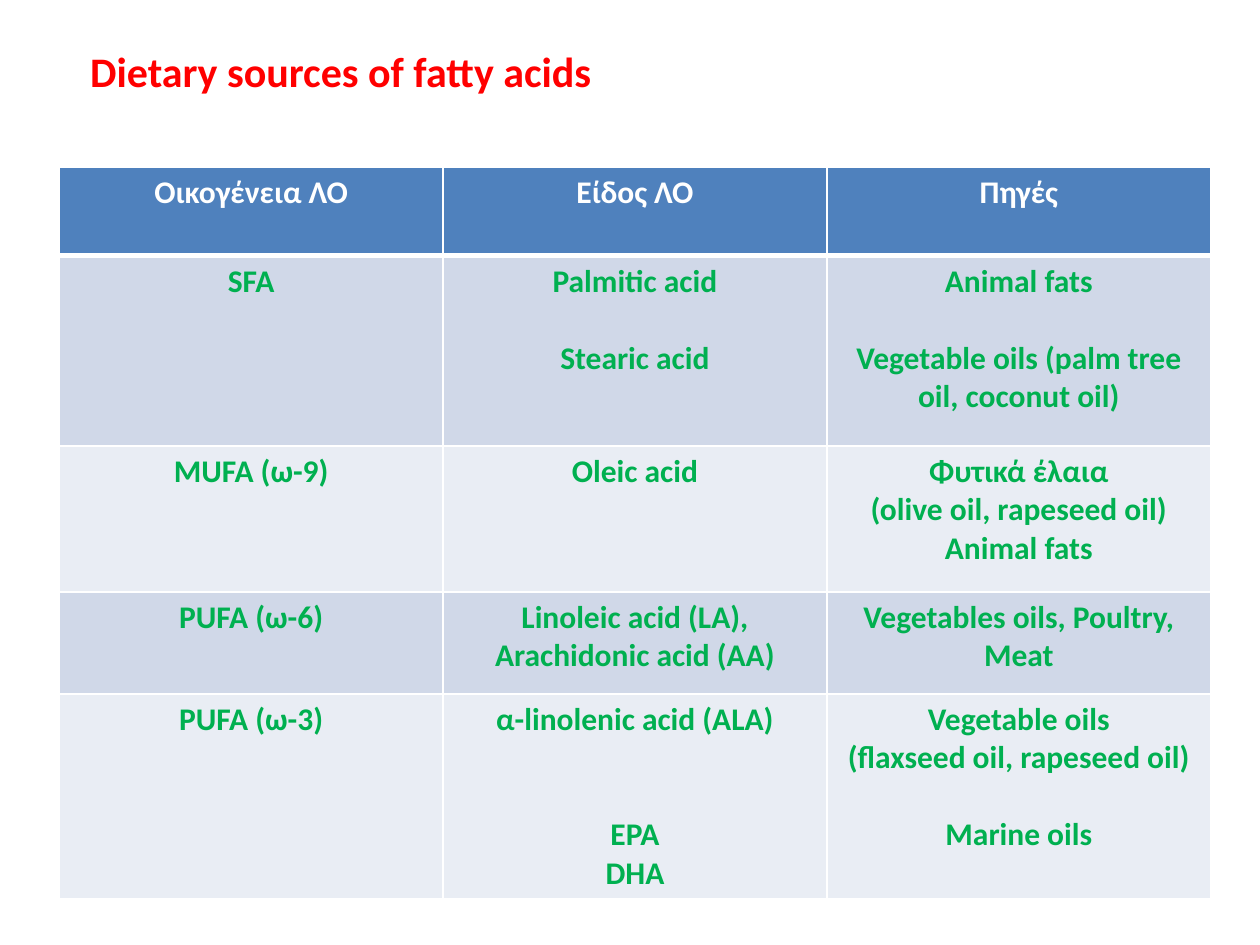
import pptx
import pptx.dml.color
import pptx.enum.text
import pptx.oxml
import pptx.oxml.ns
import pptx.util
from pptx.util import Inches

COLORS = {
    "title": "FF0000",
    "header": "4F81BD",
    "header_text": "FFFFFF",
    "band_dark": "D0D8E8",
    "band_light": "E9EDF4",
    "body_text": "00B050",
    "border": "FFFFFF",
}
LINE_HEIGHT = 22  # points taken by one 18 pt line

# Each cell is a list of lines; a number is a gap of that many lines
HEADER = ["Οικογένεια ΛΟ", "Είδος ΛΟ", "Πηγές"]
ROWS = [
    [["SFA"],
     ["Palmitic acid", 1, "Stearic acid"],
     ["Animal fats", 1, "Vegetable oils (palm tree oil, coconut oil)"]],
    [["MUFA (ω-9)"],
     ["Oleic acid"],
     ["Φυτικά έλαια", "(olive oil, rapeseed oil)", "Animal fats"]],
    [["PUFA (ω-6)"],
     ["Linoleic acid (LA), Arachidonic acid (AA)"],
     ["Vegetables oils, Poultry, Meat"]],
    [["PUFA (ω-3)"],
     ["α-linolenic acid (ALA)", 2, "ΕΡΑ", "DHA"],
     ["Vegetable oils", "(flaxseed oil, rapeseed oil)", 1, "Marine oils"]],
]
ROW_HEIGHTS = [0.7, 1.51, 1.16, 0.81, 1.6]


class SlideBuilder:
    font = "Calibri"

    def __init__(self, prs):
        self.s = prs.slides.add_slide(prs.slide_layouts[5])

    def color(self, name):
        return pptx.dml.color.RGBColor.from_string(COLORS[name])

    def format(self, p, size, color):
        p.alignment = pptx.enum.text.PP_ALIGN.CENTER
        p.font.name = self.font
        p.font.size = pptx.util.Pt(size)
        p.font.bold = True
        p.font.color.rgb = self.color(color)

    def title(self, text, left, top, width, height):
        sp = self.s.shapes.title
        sp.left, sp.top = Inches(left), Inches(top)
        sp.width, sp.height = Inches(width), Inches(height)
        tf = sp.text_frame
        tf.text = text
        tf.word_wrap = False
        tf.auto_size = pptx.enum.text.MSO_AUTO_SIZE.NONE
        tf.vertical_anchor = pptx.enum.text.MSO_ANCHOR.TOP
        self.format(tf.paragraphs[0], 24, "title")

    def borders(self, cell, **widths):
        tc_pr = cell._tc.get_or_add_tcPr()
        for side in "LRTB":
            width = pptx.util.Pt(widths.get(side, 1))
            tc_pr.append(pptx.oxml.parse_xml(
                f'<a:ln{side} {pptx.oxml.ns.nsdecls("a")} w="{width}"><a:solidFill>'
                f'<a:srgbClr val="{COLORS["border"]}"/></a:solidFill></a:ln{side}>'))

    def cell(self, cell, lines, fill, color, **widths):
        self.borders(cell, **widths)
        cell.fill.solid()
        cell.fill.fore_color.rgb = self.color(fill)
        p, gap = None, 0
        for line in lines:
            if isinstance(line, int):
                gap = line
                continue
            p = cell.text_frame.add_paragraph() if p else cell.text_frame.paragraphs[0]
            p.text = line
            self.format(p, 18, color)
            if gap:
                p.space_before = pptx.util.Pt(gap * LINE_HEIGHT)
                gap = 0

    def table(self, header, rows, heights, left, top, width):
        table = self.s.shapes.add_table(
            len(rows) + 1, len(header), Inches(left), Inches(top),
            Inches(width), Inches(sum(heights))).table
        for row, height in zip(table.rows, heights):
            row.height = Inches(height)
        for c, text in enumerate(header):
            self.cell(table.cell(0, c), [text], "header", "header_text", B=3)
        for r, row in enumerate(rows, 1):
            fill = "band_dark" if r % 2 else "band_light"
            for c, lines in enumerate(row):
                self.cell(table.cell(r, c), lines, fill, "body_text",
                          T=3 if r == 1 else 1)


def main():
    prs = pptx.Presentation()
    prs.slide_width, prs.slide_height = Inches(10), Inches(7.5)
    slide = SlideBuilder(prs)

    # Title
    slide.title("Dietary sources of fatty acids", 0.51, 0.31, 4.39, 0.5)

    # Table of families, acids and sources
    slide.table(HEADER, ROWS, ROW_HEIGHTS, 0.47, 1.33, 9.14)

    prs.save("out.pptx")


if __name__ == "__main__":
    main()
